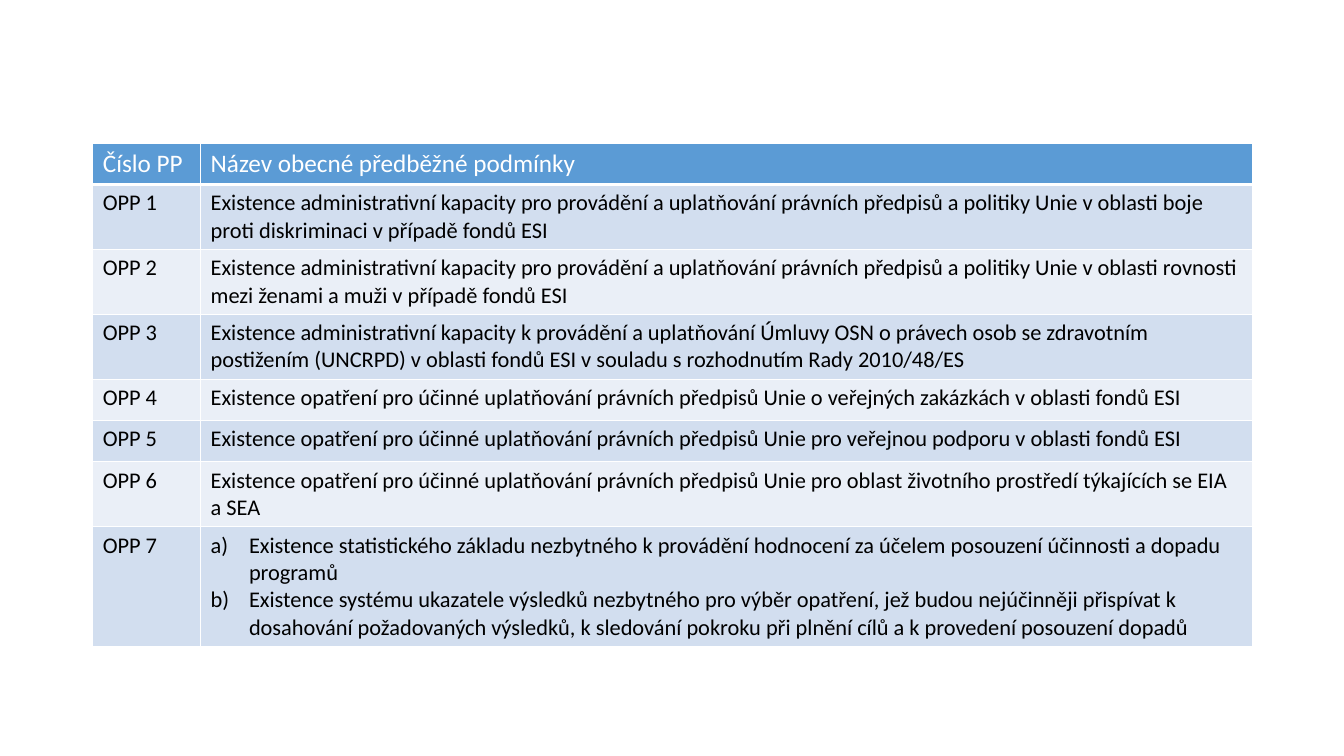
"""Build a slide with a table of general ex-ante conditions."""
import pptx
import pptx.dml.color
import pptx.oxml
import pptx.oxml.ns
import pptx.util
from pptx.util import Inches


def color(value):
    return pptx.dml.color.RGBColor.from_string(value)


def add_borders(cell, bottom_width):
    properties = cell._tc.get_or_add_tcPr()
    widths = {"lnL": 1, "lnR": 1, "lnT": 1, "lnB": bottom_width}
    for index, (side, width) in enumerate(widths.items()):
        border = pptx.oxml.parse_xml(
            f'<a:{side} {pptx.oxml.ns.nsdecls("a")} w="{pptx.util.Pt(width)}">'
            '<a:solidFill><a:srgbClr val="FFFFFF"/></a:solidFill>'
            f'</a:{side}>'
        )
        properties.insert(index, border)


conditions = [
    ("Číslo PP", "Název obecné předběžné podmínky", 0.41),
    ("OPP 1", "Existence administrativní kapacity pro provádění a uplatňování právních předpisů "
     "a politiky Unie v oblasti boje proti diskriminaci v případě fondů ESI", 0.64),
    ("OPP 2", "Existence administrativní kapacity pro provádění a uplatňování právních předpisů "
     "a politiky Unie v oblasti rovnosti mezi ženami a muži v případě fondů ESI", 0.64),
    ("OPP 3", "Existence administrativní kapacity k provádění a uplatňování Úmluvy OSN o právech "
     "osob se zdravotním postižením (UNCRPD) v oblasti fondů ESI v souladu s rozhodnutím "
     "Rady 2010/48/ES", 0.64),
    ("OPP 4", "Existence opatření pro účinné uplatňování právních předpisů Unie o veřejných "
     "zakázkách v oblasti fondů ESI", 0.41),
    ("OPP 5", "Existence opatření pro účinné uplatňování právních předpisů Unie pro veřejnou "
     "podporu v oblasti fondů ESI", 0.41),
    ("OPP 6", "Existence opatření pro účinné uplatňování právních předpisů Unie pro oblast "
     "životního prostředí týkajících se EIA a SEA", 0.64),
    ("OPP 7", "Existence statistického základu nezbytného k provádění hodnocení za účelem "
     "posouzení účinnosti a dopadu programů\n"
     "Existence systému ukazatele výsledků nezbytného pro výběr opatření, jež budou "
     "nejúčinněji přispívat k dosahování požadovaných výsledků, k sledování pokroku při plnění "
     "cílů a k provedení posouzení dopadů", 1.17),
]

presentation = pptx.Presentation()
presentation.slide_width = Inches(13.33)
presentation.slide_height = Inches(7.5)
slide = presentation.slides.add_slide(presentation.slide_layouts[6])

table_height = sum(height for number, name, height in conditions)
table = slide.shapes.add_table(
    len(conditions), 2, Inches(0.92), Inches(1.42), Inches(11.5), Inches(table_height)
).table
table.columns[0].width = Inches(1.07)
table.columns[1].width = Inches(10.43)

for row_index, (number, name, height) in enumerate(conditions):
    is_header = row_index == 0
    table.rows[row_index].height = Inches(height)
    band = "D2DEEF" if row_index % 2 else "EAEFF7"
    for column_index, text in enumerate((number, name)):
        cell = table.cell(row_index, column_index)
        cell.text_frame.text = text
        cell.fill.solid()
        cell.fill.fore_color.rgb = color("5B9BD5" if is_header else band)
        add_borders(cell, 3 if is_header else 1)
        paragraphs = cell.text_frame.paragraphs
        for paragraph in paragraphs:
            if len(paragraphs) > 1:
                properties = paragraph._p.get_or_add_pPr()
                properties.set("marL", str(Inches(0.38)))
                properties.set("indent", str(-Inches(0.38)))
                properties.append(pptx.oxml.parse_xml(
                    f'<a:buAutoNum {pptx.oxml.ns.nsdecls("a")} type="alphaLcParenR"/>'
                ))
            for run in paragraph.runs:
                run.font.name = "Calibri"
                run.font.size = pptx.util.Pt(18 if is_header else 16)
                run.font.bold = False
                run.font.color.rgb = color("FFFFFF" if is_header else "000000")

presentation.save("out.pptx")
